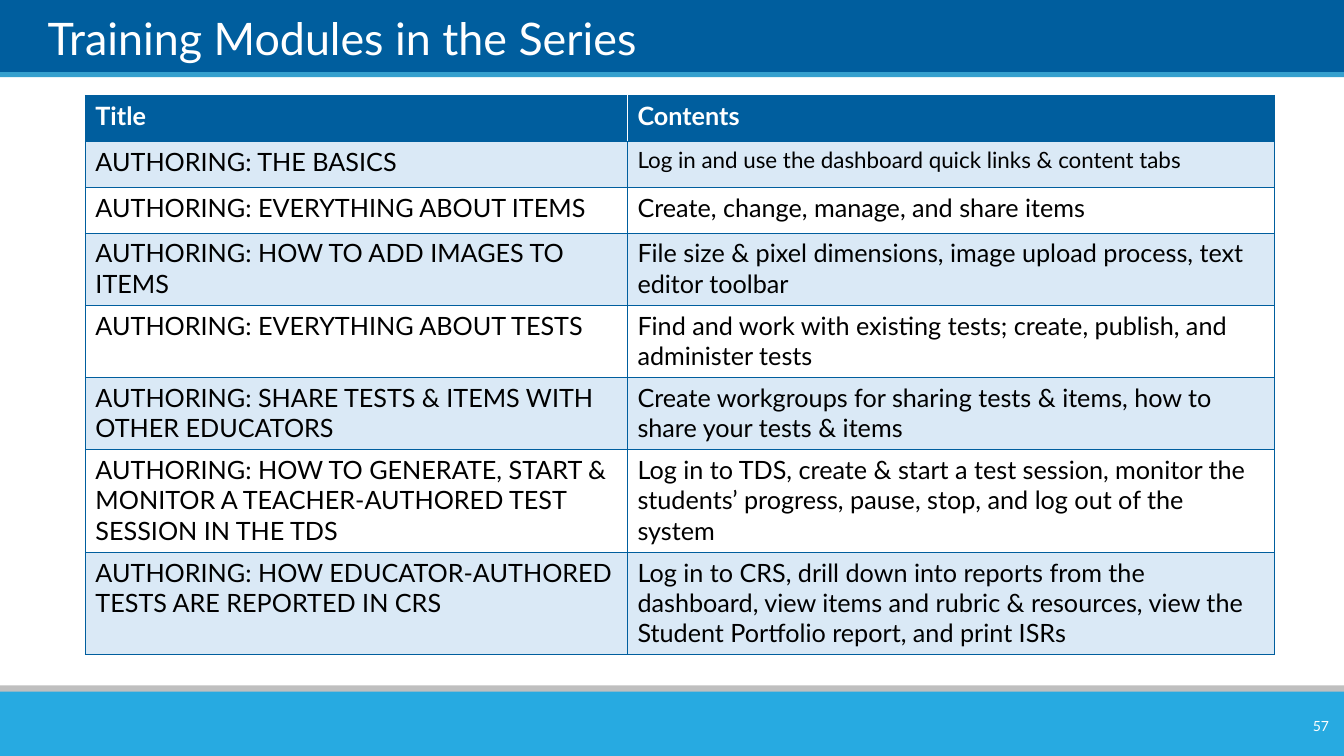
from lxml import etree
from pptx import Presentation
from pptx.dml.color import RGBColor
from pptx.enum.shapes import MSO_SHAPE
from pptx.enum.text import MSO_ANCHOR, PP_ALIGN
from pptx.oxml.ns import qn
from pptx.util import Pt

RECTANGLE = MSO_SHAPE.RECTANGLE
BOTTOM, MIDDLE = MSO_ANCHOR.BOTTOM, MSO_ANCHOR.MIDDLE
LEFT, RIGHT = PP_ALIGN.LEFT, PP_ALIGN.RIGHT

FONT = "Lato"
COLORS = {
    "navy": "005E9E",
    "stripe": "35A0CE",
    "gray": "BFBFBF",
    "sky": "27AAE1",
    "pale": "DAE9F6",
    "white": "FFFFFF",
    "black": "000000",
}

TITLE = "Training Modules in the Series"
PAGE_NUMBER = "57"
HEADINGS = ("Title", "Contents")
MODULES = [
    ("AUTHORING: THE BASICS",
     "Log in and use the dashboard quick links & content tabs"),
    ("AUTHORING: EVERYTHING ABOUT ITEMS",
     "Create, change, manage, and share items"),
    ("AUTHORING: HOW TO ADD IMAGES TO ITEMS",
     "File size & pixel dimensions, image upload process, text editor toolbar"),
    ("AUTHORING: EVERYTHING ABOUT TESTS",
     "Find and work with existing tests; create, publish, and administer tests"),
    ("AUTHORING: SHARE TESTS & ITEMS WITH OTHER EDUCATORS",
     "Create workgroups for sharing tests & items, how to share your tests & items"),
    ("AUTHORING: HOW TO GENERATE, START & MONITOR A TEACHER-AUTHORED TEST SESSION IN THE TDS",
     "Log in to TDS, create & start a test session, monitor the students’ progress, "
     "pause, stop, and log out of the system"),
    ("AUTHORING: HOW EDUCATOR-AUTHORED TESTS ARE REPORTED IN CRS",
     "Log in to CRS, drill down into reports from the dashboard, view items and rubric "
     "& resources, view the Student Portfolio report, and print ISRs"),
]
ROW_LINES = (1, 1, 1, 2, 2, 2, 3, 3)
LINE_HEIGHTS = {1: 32.85, 2: 51.6, 3: 73.2}
COLUMN_WIDTHS = (387.2, 462.4)
SMALL_CELL = (1, 1)

SLIDE_WIDTH, SLIDE_HEIGHT = 960, 540
BANDS = [
    (-0.5, 54, "navy"),
    (51.6, 3.6, "stripe"),
    (489.6, 10, "gray"),
    (494, 46, "sky"),
]


def rgb(name):
    return RGBColor.from_string(COLORS[name])


def style_text(frame, text, size, color, bold=False, align=LEFT):
    frame.text = text
    frame.word_wrap = True
    paragraph = frame.paragraphs[0]
    paragraph.alignment = align
    font = paragraph.runs[0].font
    font.name, font.size, font.bold = FONT, Pt(size), bold
    font.color.rgb = rgb(color)


def add_label(slide, box, text, size, anchor, align=LEFT):
    frame = slide.shapes.add_textbox(*map(Pt, box)).text_frame
    style_text(frame, text, size, "white", align=align)
    frame.vertical_anchor = anchor
    return frame


def set_borders(cell, colors):
    properties = cell._tc.get_or_add_tcPr()
    for position, (side, color) in enumerate(colors.items()):
        line = etree.Element(qn("a:" + side), w=str(Pt(0.75)))
        fill = etree.SubElement(line, qn("a:solidFill"))
        etree.SubElement(fill, qn("a:srgbClr"), val=COLORS[color])
        properties.insert(position, line)


def add_modules_table(slide):
    rows = [HEADINGS] + MODULES
    heights = [LINE_HEIGHTS[lines] for lines in ROW_LINES]
    box = (61, 68, sum(COLUMN_WIDTHS), sum(heights))
    table = slide.shapes.add_table(len(rows), len(HEADINGS), *map(Pt, box)).table
    table.horz_banding = False
    for column, width in zip(table.columns, COLUMN_WIDTHS):
        column.width = Pt(width)
    for r, row in enumerate(rows):
        table.rows[r].height = Pt(heights[r])
        header = r == 0
        background = "navy" if header else "pale" if r % 2 else "white"
        for c, text in enumerate(row):
            cell = table.cell(r, c)
            size = 16 if (r, c) == SMALL_CELL else 18
            style_text(cell.text_frame, text, size, "white" if header else "black", header)
            cell.fill.solid()
            cell.fill.fore_color.rgb = rgb(background)
            borders = dict.fromkeys(("lnL", "lnR", "lnT", "lnB"), "navy")
            if header:
                borders["lnL" if c else "lnR"] = "white"
            set_borders(cell, borders)


def main():
    deck = Presentation()
    deck.slide_width, deck.slide_height = Pt(SLIDE_WIDTH), Pt(SLIDE_HEIGHT)
    slide = deck.slides.add_slide(deck.slide_layouts[6])
    for top, height, color in BANDS:
        band = slide.shapes.add_shape(RECTANGLE, 0, Pt(top), Pt(SLIDE_WIDTH), Pt(height))
        band.shadow.inherit = False
        band.fill.solid()
        band.fill.fore_color.rgb = rgb(color)
        band.line.fill.background()
    heading = add_label(slide, (34, 5, 895, 41), TITLE, 32, BOTTOM)
    heading.margin_left = heading.margin_right = 0
    heading.margin_top = heading.margin_bottom = 0
    add_modules_table(slide)
    add_label(slide, (901, 507.6, 55.4, 21.6), PAGE_NUMBER, 10, MIDDLE, RIGHT)
    deck.save("out.pptx")


if __name__ == "__main__":
    main()
